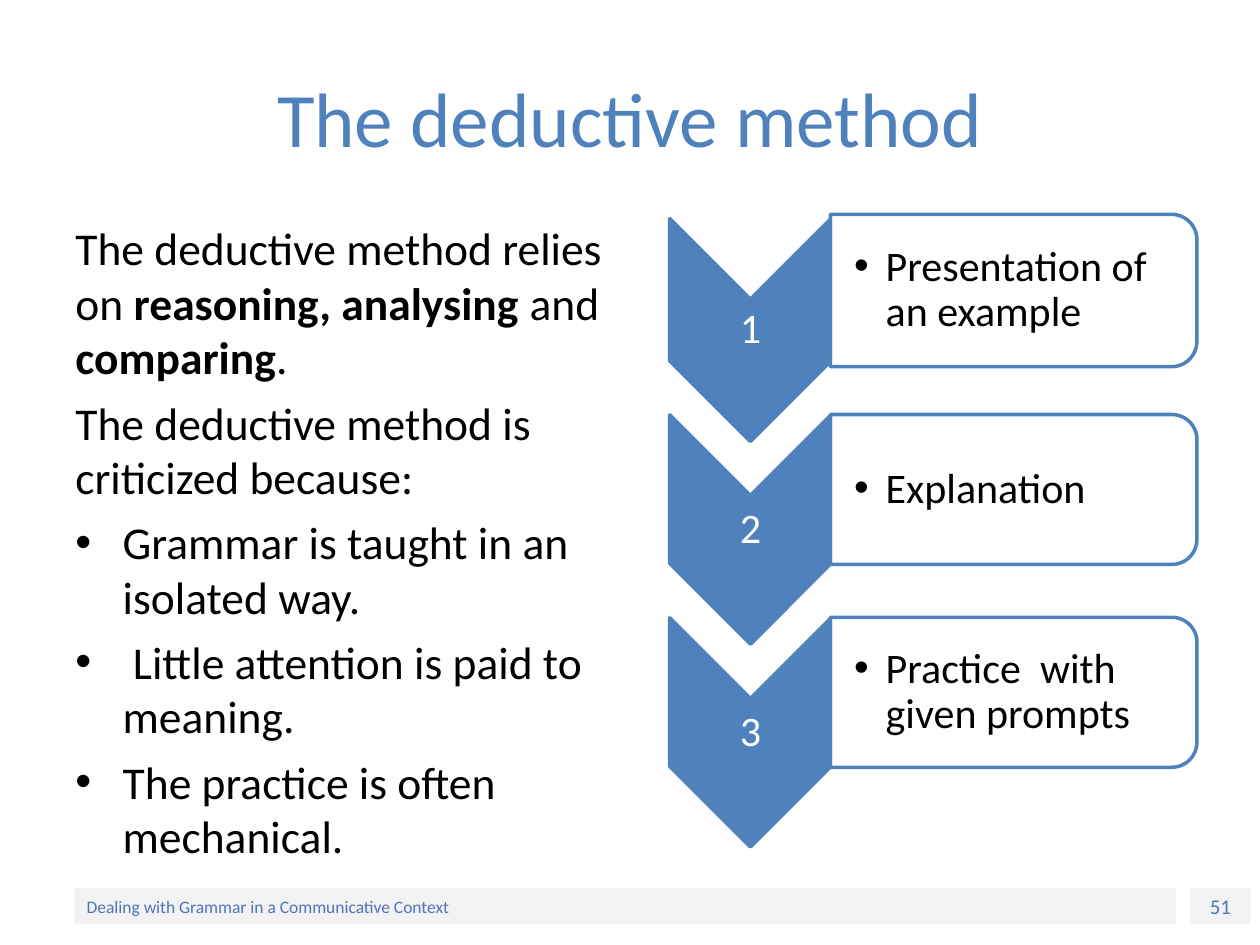
"""Build the slide on the deductive method with its three numbered steps."""
from dataclasses import dataclass

from lxml import etree
from pptx import Presentation
from pptx.dml.color import RGBColor
from pptx.enum import shapes, text
from pptx.oxml import ns
from pptx.util import Pt


@dataclass(frozen=True)
class Theme:
    font: str = "Calibri"
    blue: str = "4F81BD"
    footer_blue: str = "5075BC"
    grey: str = "F2F2F2"
    black: str = "000000"
    white: str = "FFFFFF"
    title: int = 44
    body: int = 26
    step: int = 24
    number: int = 12
    footer: int = 10


def add_text(tf, content, size, color, align="LEFT", before=0, spacing=None, indent=0):
    p = tf.paragraphs[0] if not tf.text else tf.add_paragraph()
    p.alignment = text.PP_ALIGN[align]
    p.space_before = Pt(before)
    if spacing:
        p.line_spacing = spacing
    if indent:
        pPr = p._p.get_or_add_pPr()
        pPr.set("marL", str(Pt(indent)))
        pPr.set("indent", str(-Pt(indent)))
        etree.SubElement(pPr, ns.qn("a:buFont"), typeface="Arial")
        etree.SubElement(pPr, ns.qn("a:buChar"), char="•")
    for i, part in enumerate(content.split("*")):
        r = p.add_run()
        r.text = part
        r.font.name = theme.font
        r.font.size = Pt(size)
        r.font.bold = i % 2 == 1
        r.font.color.rgb = RGBColor.from_string(color)


def add_box(kind, left, top, width, height, fill=None, line=None, rotation=0,
            anchor="MIDDLE", margins=(7.2, 3.6, 7.2, 3.6)):
    box = [Pt(v) for v in (left, top, width, height)]
    if kind is None:
        sp = s.shapes.add_textbox(*box)
    else:
        sp = s.shapes.add_shape(kind, *box)
        sp.shadow.inherit = False
        sp.rotation = rotation
        sp.fill.solid()
        sp.fill.fore_color.rgb = RGBColor.from_string(fill)
        if line:
            sp.line.color.rgb = RGBColor.from_string(line)
            sp.line.width = Pt(2)
        else:
            sp.line.fill.background()
    tf = sp.text_frame
    tf.word_wrap = True
    tf.vertical_anchor = text.MSO_ANCHOR[anchor]
    tf.margin_left, tf.margin_top, tf.margin_right, tf.margin_bottom = map(Pt, margins)
    return sp


theme = Theme()
shape = shapes.MSO_SHAPE
prs = Presentation()
prs.slide_width, prs.slide_height = Pt(720), Pt(540)
s = prs.slides.add_slide(prs.slide_layouts[6])

sp = add_box(shape.RECTANGLE, 680.4, 507.2, 34, 21, theme.grey, margins=(0, 0, 0, 0))
add_text(sp.text_frame, "51", theme.number, theme.footer_blue, align="CENTER")
sp = add_box(shape.RECTANGLE, 42.5, 507.2, 629.3, 21, theme.grey)
add_text(sp.text_frame, "Dealing with Grammar in a Communicative Context",
         theme.footer, theme.footer_blue)

sp = add_box(None, 36, 21.6, 648, 90)
add_text(sp.text_frame, "The deductive method", theme.title, theme.blue, align="CENTER")

body = [
    ("The deductive method relies on *reasoning, analysing *and *comparing*.", 0),
    ("The deductive method is criticized because:", 0),
    ("Grammar is taught in an isolated way.", 27),
    (" Little attention is paid to meaning.", 27),
    ("The practice is often mechanical.", 27),
]
tf = add_box(None, 36, 122.4, 318.2, 363, anchor="TOP").text_frame
for i, (content, indent) in enumerate(body):
    add_text(tf, content, theme.body, theme.black, before=6 if i else 0, indent=indent)

arrow_x, arrow_width = 428.8, 92.2
panel_x, panel_width = 579.2, 209.5
steps = [
    ("Presentation of an example", 188.6, 127.4, 166, 87.1),
    ("Explanation", 302.6, 131, 279.7, 85.7),
    ("Practice  with given prompts", 418.5, 131, 395.6, 85.7),
]
for n, (content, arrow_y, arrow_len, panel_y, panel_height) in enumerate(steps, 1):
    add_box(shape.CHEVRON, arrow_x - arrow_len / 2, arrow_y - arrow_width / 2,
            arrow_len, arrow_width, theme.blue, theme.blue, rotation=90)
    label_height = arrow_len - arrow_width
    sp = add_box(None, arrow_x - arrow_width / 2, arrow_y - label_height / 2,
                 arrow_width, label_height, margins=(1.2,) * 4)
    add_text(sp.text_frame, str(n), theme.step, theme.white, align="CENTER", spacing=0.9)

    sp = add_box(shape.ROUND_2_SAME_RECTANGLE, panel_x - panel_height / 2,
                 panel_y - panel_width / 2, panel_height, panel_width,
                 theme.white, theme.blue, rotation=90)
    color = sp._element.spPr.find(ns.qn("a:solidFill"))[0]
    etree.SubElement(color, ns.qn("a:alpha"), val="90000")
    sp = add_box(None, panel_x - panel_width / 2, panel_y - panel_height / 2 + 4,
                 panel_width - 4, panel_height - 8, margins=(13.7, 1.2, 1.2, 1.2))
    add_text(sp.text_frame, content, theme.step, theme.black, spacing=0.9, indent=18)

prs.save("out.pptx")
